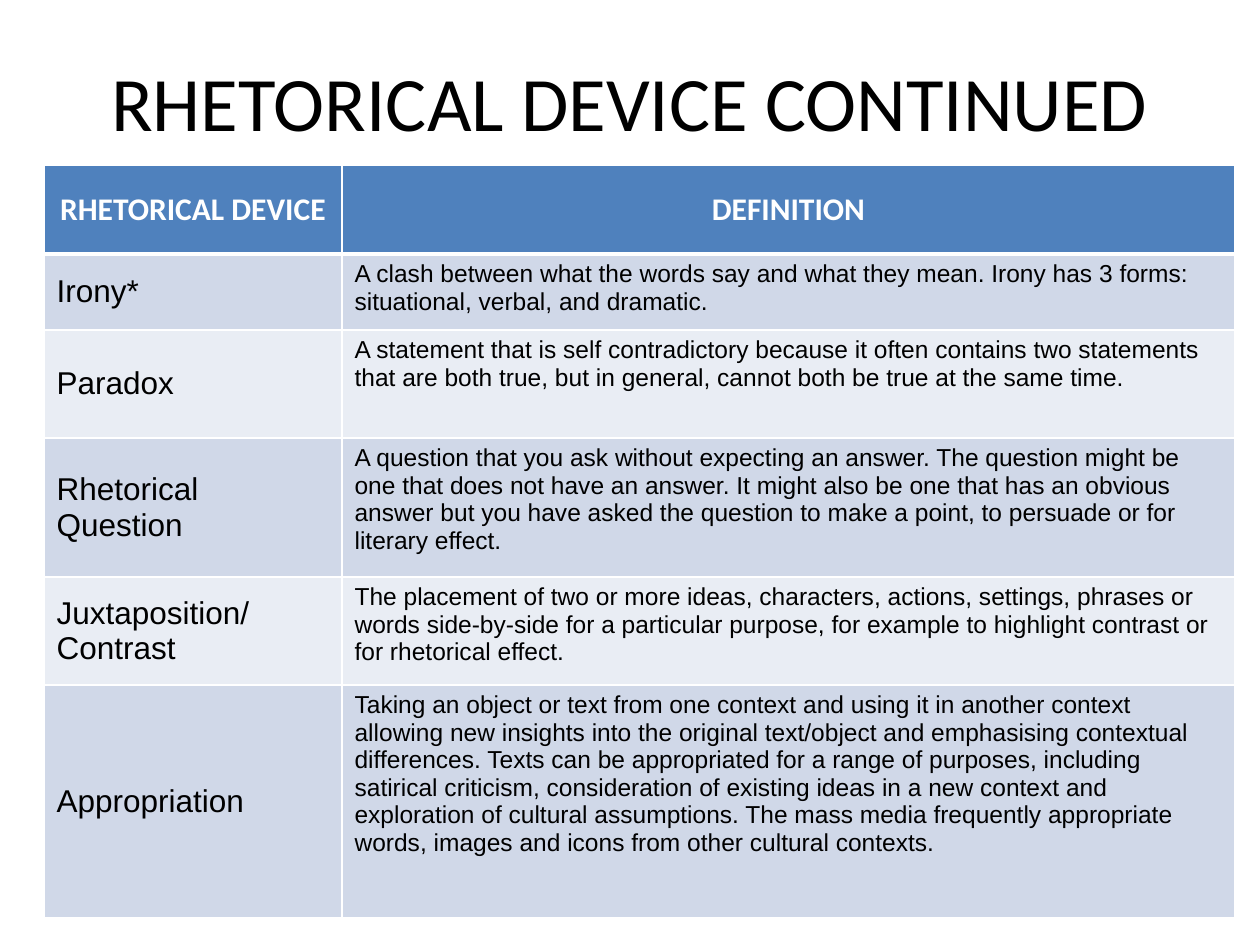
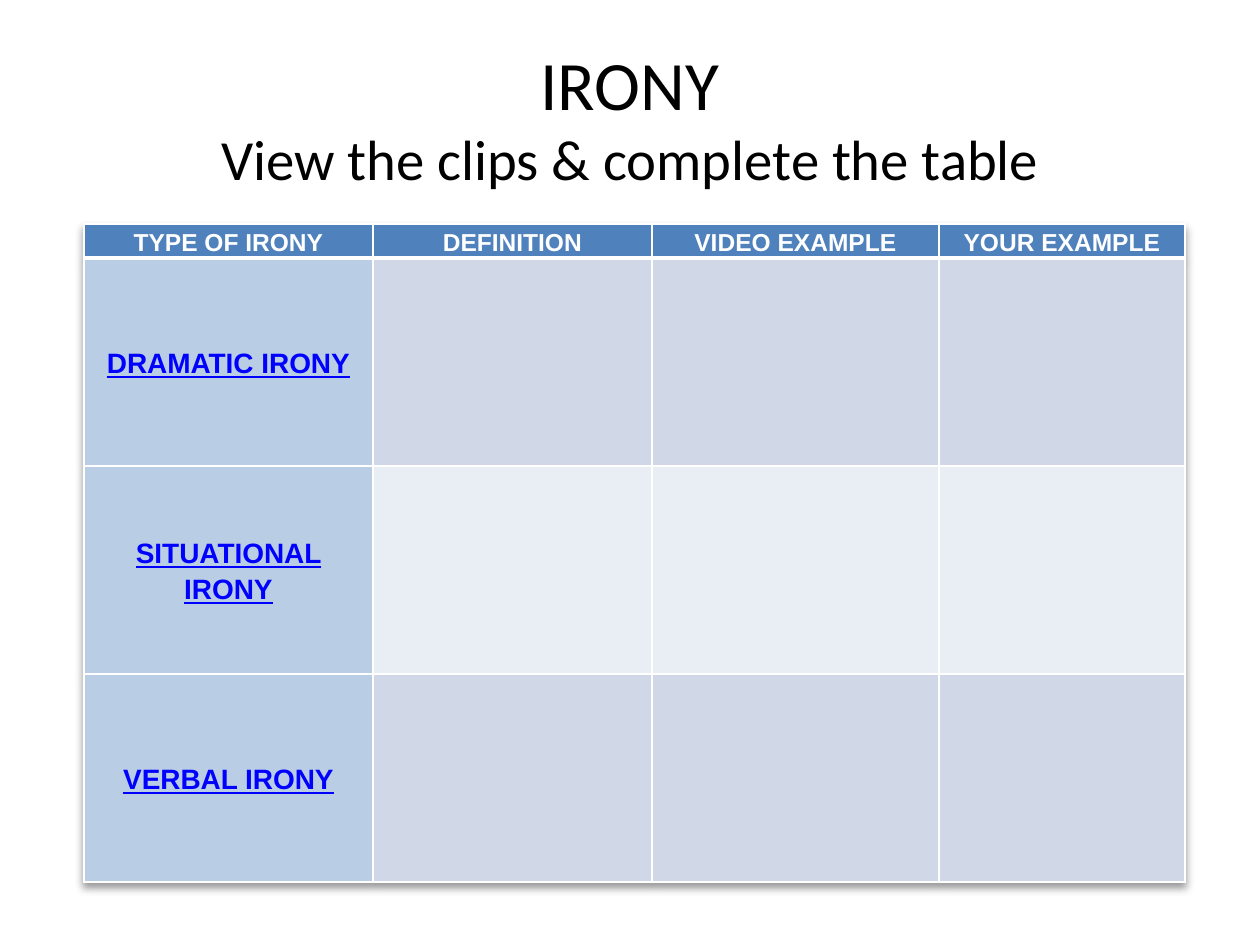
from lxml.etree import SubElement
from pptx import Presentation
from pptx.dml.color import RGBColor
from pptx.enum.text import MSO_ANCHOR, PP_ALIGN
from pptx.oxml import parse_xml
from pptx.oxml.ns import nsdecls, qn
from pptx.util import Pt

PX = 914400 / 126
COLOURS = {
    "black": "000000", "white": "FFFFFF", "header": "4F81BD", "label": "B9CDE5",
    "odd": "D0D8E8", "even": "E9EDF4", "link": "0000FF",
}
HEADING = {"name": "Calibri", "size": 18, "bold": True, "colour": "white"}
DEVICE = {"name": "Arial", "size": 18, "colour": "black"}
DEFINITION = {**DEVICE, "size": 14}
COLUMN_TITLE = {**HEADING, "name": "Arial", "size": 14}
CLIP_LINK = {**COLUMN_TITLE, "size": 16, "colour": "link", "underline": True}
CENTRED = {"alignment": PP_ALIGN.CENTER}
SPACED = {**CENTRED, "line_spacing": 1.15}
MIDDLE = {"vertical_anchor": MSO_ANCHOR.MIDDLE}
TIGHT = {**MIDDLE, "margin_left": round(9 * PX), "margin_right": round(9 * PX),
         "margin_top": 0, "margin_bottom": 0}

DEVICES = [
    ("Irony*", "A clash between what the words say and what they mean. Irony has 3 forms: "
     "situational, verbal, and dramatic."),
    ("Paradox", "A statement that is self contradictory because it often contains two statements "
     "that are both true, but in general, cannot both be true at the same time."),
    ("Rhetorical Question", "A question that you ask without expecting an answer. "
     "The question might be one that does not have an answer. It might also be one that has an "
     "obvious answer but you have asked the question to make a point, to persuade or for "
     "literary effect."),
    ("Juxtaposition/ Contrast", "The placement of two or more ideas, characters, actions, "
     "settings, phrases or words side-by-side for a particular purpose, for example to highlight "
     "contrast or for rhetorical effect."),
    ("Appropriation", "Taking an object or text from one context and using it in another context "
     "allowing new insights into the original text/object and emphasising contextual differences. "
     "Texts can be appropriated for a range of purposes, including satirical criticism, "
     "consideration of existing ideas in a new context and exploration of cultural assumptions. "
     "The mass media frequently appropriate words, images and icons from other cultural contexts."),
]
IRONY_COLUMNS = ["TYPE OF IRONY", "DEFINITION", "VIDEO EXAMPLE", "YOUR EXAMPLE"]
IRONY_TYPES = ["DRAMATIC IRONY", "SITUATIONAL IRONY", "VERBAL IRONY"]


def set_all(target, values):
    """Set every attribute named in values on target."""
    for name, value in values.items():
        setattr(target, name, value)


class Deck:
    """Holds the shared style, the presentation and the current slide."""

    def __init__(self, width, height):
        """Start an empty presentation of the given size."""
        self.presentation = Presentation()
        self.presentation.slide_width = self.emu(width)
        self.presentation.slide_height = self.emu(height)
        self.slide = None

    def emu(self, pixels):
        """Turn pixels into EMU."""
        return round(pixels * PX)

    def add_slide(self):
        """Add a blank slide and make it current."""
        self.slide = self.presentation.slides.add_slide(self.presentation.slide_layouts[6])

    def add_run(self, paragraph, text, style):
        """Add a run with the given font style."""
        run = paragraph.add_run()
        run.text = text
        values = {**style, "size": Pt(style["size"])}
        run.font.color.rgb = RGBColor.from_string(COLOURS[values.pop("colour")])
        set_all(run.font, values)

    def add_title(self, top, height, lines):
        """Add a centred title from (text, size) lines."""
        shape = self.slide.shapes.add_textbox(*map(self.emu, (63, top, 1134, height)))
        set_all(shape.text_frame, {**MIDDLE, "word_wrap": True})
        paragraph = shape.text_frame.paragraphs[0]
        set_all(paragraph, CENTRED)
        for index, (text, size) in enumerate(lines):
            if index:
                paragraph.add_line_break()
            self.add_run(paragraph, text, {"name": "Calibri", "size": size, "colour": "black"})

    def add_grid(self, left, top, widths, heights):
        """Add a table with white borders, a header row and banded rows."""
        frame = self.slide.shapes.add_table(
            len(heights), len(widths),
            *map(self.emu, (left, top, sum(widths), sum(heights))))
        table = frame.table
        for column, width in zip(table.columns, widths):
            column.width = self.emu(width)
        for row, height in zip(table.rows, heights):
            row.height = self.emu(height)
        for row in range(len(heights)):
            fill = "header" if row == 0 else "odd" if row % 2 else "even"
            for column in range(len(widths)):
                cell = table.cell(row, column)
                self.add_borders(cell, 3 if row == 1 else 1, 1 if row else 3)
                self.fill_cell(cell, fill)
        return table

    def add_borders(self, cell, top, bottom):
        """Draw white cell borders, with top and bottom widths in points."""
        properties = cell._tc.get_or_add_tcPr()
        for side, width in {"L": 1, "R": 1, "T": top, "B": bottom}.items():
            line = SubElement(properties, qn(f"a:ln{side}"), w=str(Pt(width)))
            solid = SubElement(line, qn("a:solidFill"))
            SubElement(solid, qn("a:srgbClr"), val=COLOURS["white"])

    def fill_cell(self, cell, colour):
        """Fill a cell with a named colour."""
        cell.fill.solid()
        cell.fill.fore_color.rgb = RGBColor.from_string(COLOURS[colour])

    def add_cell_text(self, cell, text, style, layout, paragraph_format):
        """Put styled text into a cell."""
        set_all(cell, layout)
        paragraph = cell.text_frame.paragraphs[0]
        set_all(paragraph, paragraph_format)
        self.add_run(paragraph, text, style)

    def add_shadow(self, table):
        """Give a table a soft shadow below."""
        table._tbl.tblPr.insert(0, parse_xml(
            f'<a:effectLst {nsdecls("a")}><a:outerShdw blurRad="50800" dist="38100" '
            'dir="5400000" algn="t" rotWithShape="0"><a:srgbClr val="000000">'
            '<a:alpha val="40000"/></a:srgbClr></a:outerShdw></a:effectLst>'))


def build_devices(deck):
    """Build the table of rhetorical devices."""
    deck.add_slide()
    deck.add_title(37, 128, [("RHETORICAL DEVICE CONTINUED", 44)])
    table = deck.add_grid(44, 165, [298, 893], [89, 76, 108, 139, 108, 233])
    for column, heading in enumerate(["RHETORICAL DEVICE", "DEFINITION"]):
        deck.add_cell_text(table.cell(0, column), heading, HEADING, MIDDLE, CENTRED)
    for row, (device, definition) in enumerate(DEVICES, 1):
        deck.add_cell_text(table.cell(row, 0), device, DEVICE, MIDDLE, {})
        deck.add_cell_text(table.cell(row, 1), definition, DEFINITION, {}, {})


def build_irony(deck):
    """Build the irony worksheet."""
    deck.add_slide()
    deck.add_title(38, 157, [("IRONY", 39.6), ("View the clips & complete the table", 32.4)])
    table = deck.add_grid(84, 224, [289, 279, 287, 246], [32, 208, 208, 208])
    deck.add_shadow(table)
    for column, heading in enumerate(IRONY_COLUMNS):
        deck.add_cell_text(table.cell(0, column), heading, COLUMN_TITLE, TIGHT, SPACED)
    for row, irony in enumerate(IRONY_TYPES, 1):
        deck.fill_cell(table.cell(row, 0), "label")
        deck.add_cell_text(table.cell(row, 0), irony, CLIP_LINK, TIGHT, SPACED)


def main():
    """Build both slides and save them."""
    deck = Deck(1260, 945)
    build_devices(deck)
    build_irony(deck)
    deck.presentation.save("out.pptx")


if __name__ == "__main__":
    main()
